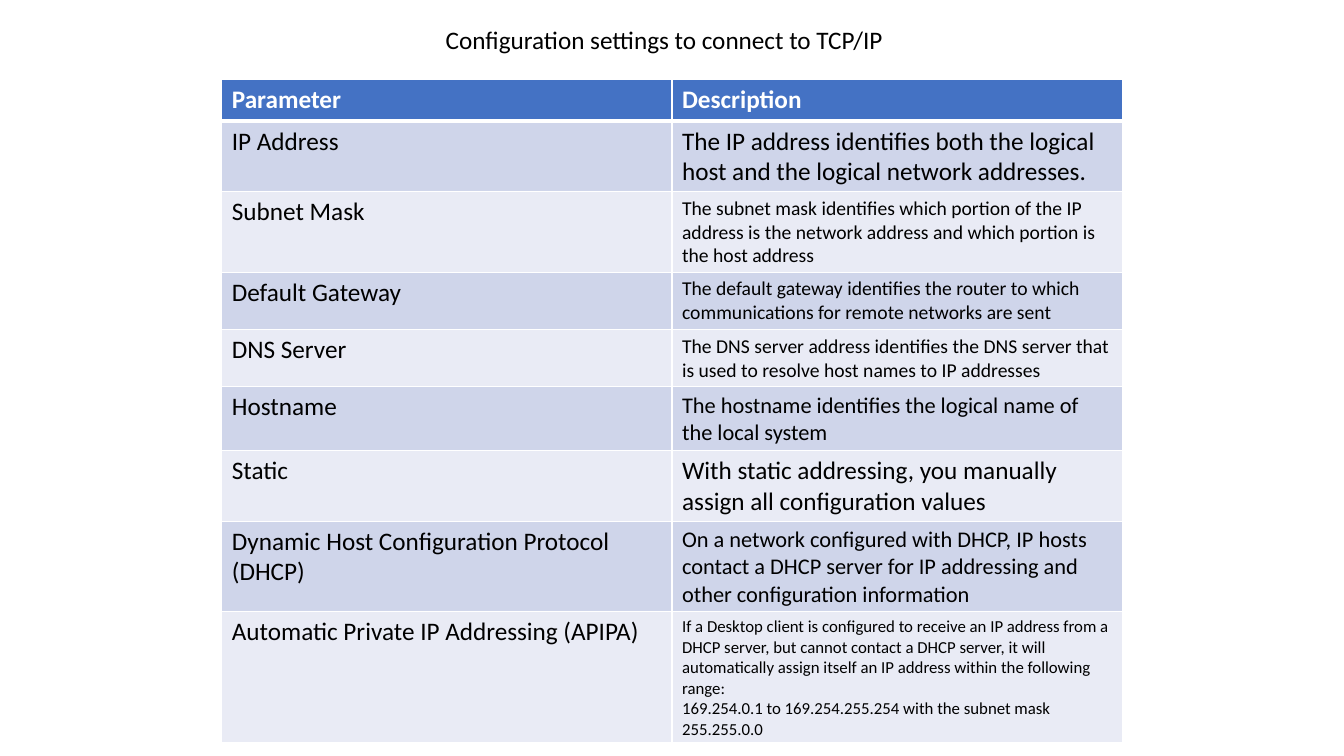
from lxml import etree
from pptx import Presentation
from pptx.dml.color import RGBColor
from pptx.enum.text import MSO_ANCHOR, MSO_AUTO_SIZE, PP_ALIGN
from pptx.oxml.ns import qn
from pptx.util import Inches, Pt

BLUE = RGBColor(0x44, 0x72, 0xC4)
BAND_DARK = RGBColor(0xCF, 0xD5, 0xEA)
BAND_LIGHT = RGBColor(0xE9, 0xEB, 0xF5)
WHITE = RGBColor(0xFF, 0xFF, 0xFF)
BLACK = RGBColor(0, 0, 0)
FONT = "Calibri"

TITLE = "Configuration settings to connect to TCP/IP"
HEADER = ("Parameter", "Description")
# Parameter, size of the description, paragraphs of the description
SETTINGS = [
    ("IP Address", 18, ["The IP address identifies both the logical host and the "
                        "logical network addresses."]),
    ("Subnet Mask", 14, ["The subnet mask identifies which portion of the IP address is "
                         "the network address and which portion is the host address"]),
    ("Default Gateway", 14, ["The default gateway identifies the router to which "
                             "communications for remote networks are sent"]),
    ("DNS Server", 14, ["The DNS server address identifies the DNS server that is used "
                        "to resolve host names to IP addresses"]),
    ("Hostname", 16, ["The hostname identifies the logical name of the local system"]),
    ("Static", 18, ["With static addressing, you manually assign all configuration values"]),
    ("Dynamic Host Configuration Protocol (DHCP)", 16,
     ["On a network configured with DHCP, IP hosts contact a DHCP server for IP "
      "addressing and other configuration information"]),
    ("Automatic Private IP Addressing (APIPA)", 12,
     ["If a Desktop client is configured to receive an IP address from a DHCP server, "
      "but cannot contact a DHCP server, it will automatically assign itself an IP "
      "address within the following range:",
      "169.254.0.1 to 169.254.255.254 with the subnet mask 255.255.0.0"]),
]


def write(tf, paragraphs, size, color, bold=False):
    for i, text in enumerate(paragraphs):
        p = tf.add_paragraph() if i else tf.paragraphs[0]
        p.alignment = PP_ALIGN.LEFT
        r = p.add_run()
        r.text = text
        r.font.name = FONT
        r.font.size = Pt(size)
        r.font.bold = bold
        r.font.color.rgb = color


def set_borders(cell, top, bottom):
    """Draw white cell borders; top and bottom are widths in points."""
    tc_pr = cell._tc.get_or_add_tcPr()
    widths = {"a:lnL": 1, "a:lnR": 1, "a:lnT": top, "a:lnB": bottom}
    for i, (tag, width) in enumerate(widths.items()):
        ln = etree.Element(qn(tag), w=str(Pt(width)))
        fill = etree.SubElement(ln, qn("a:solidFill"))
        etree.SubElement(fill, qn("a:srgbClr"), val=str(WHITE))
        tc_pr.insert(i, ln)


def fill_cell(cell, paragraphs, size, color, fill, bold=False, top=1, bottom=1):
    write(cell.text_frame, paragraphs, size, color, bold)
    cell.fill.solid()
    cell.fill.fore_color.rgb = fill
    set_borders(cell, top, bottom)


def add_title(slide, left, top, width, height):
    sp = slide.shapes.title
    sp.left, sp.top, sp.width, sp.height = left, top, width, height
    tf = sp.text_frame
    tf.word_wrap = True
    tf.auto_size = MSO_AUTO_SIZE.SHAPE_TO_FIT_TEXT
    tf.vertical_anchor = MSO_ANCHOR.TOP
    write(tf, [TITLE], 18, BLACK)


def add_settings_table(slide, left, top, width, row_height):
    rows = len(SETTINGS) + 1
    table = slide.shapes.add_table(rows, 2, left, top, width, row_height * rows).table
    for cell, text in zip(table.rows[0].cells, HEADER):
        fill_cell(cell, [text], 18, WHITE, BLUE, bold=True, bottom=3)
    for i, (name, size, description) in enumerate(SETTINGS, start=1):
        band = BAND_DARK if i % 2 else BAND_LIGHT
        line = 3 if i == 1 else 1
        fill_cell(table.cell(i, 0), [name], 18, BLACK, band, top=line)
        fill_cell(table.cell(i, 1), description, size, BLACK, band, top=line)


def main():
    prs = Presentation()
    prs.slide_width, prs.slide_height = Inches(13.33), Inches(7.5)
    slide = prs.slides.add_slide(prs.slide_layouts[5])
    add_title(slide, Inches(4.32), Inches(0.19), Inches(5.19), Inches(0.4))
    add_settings_table(slide, Inches(2.2), Inches(0.79), Inches(8.93), Inches(0.41))
    prs.save("out.pptx")


if __name__ == "__main__":
    main()
